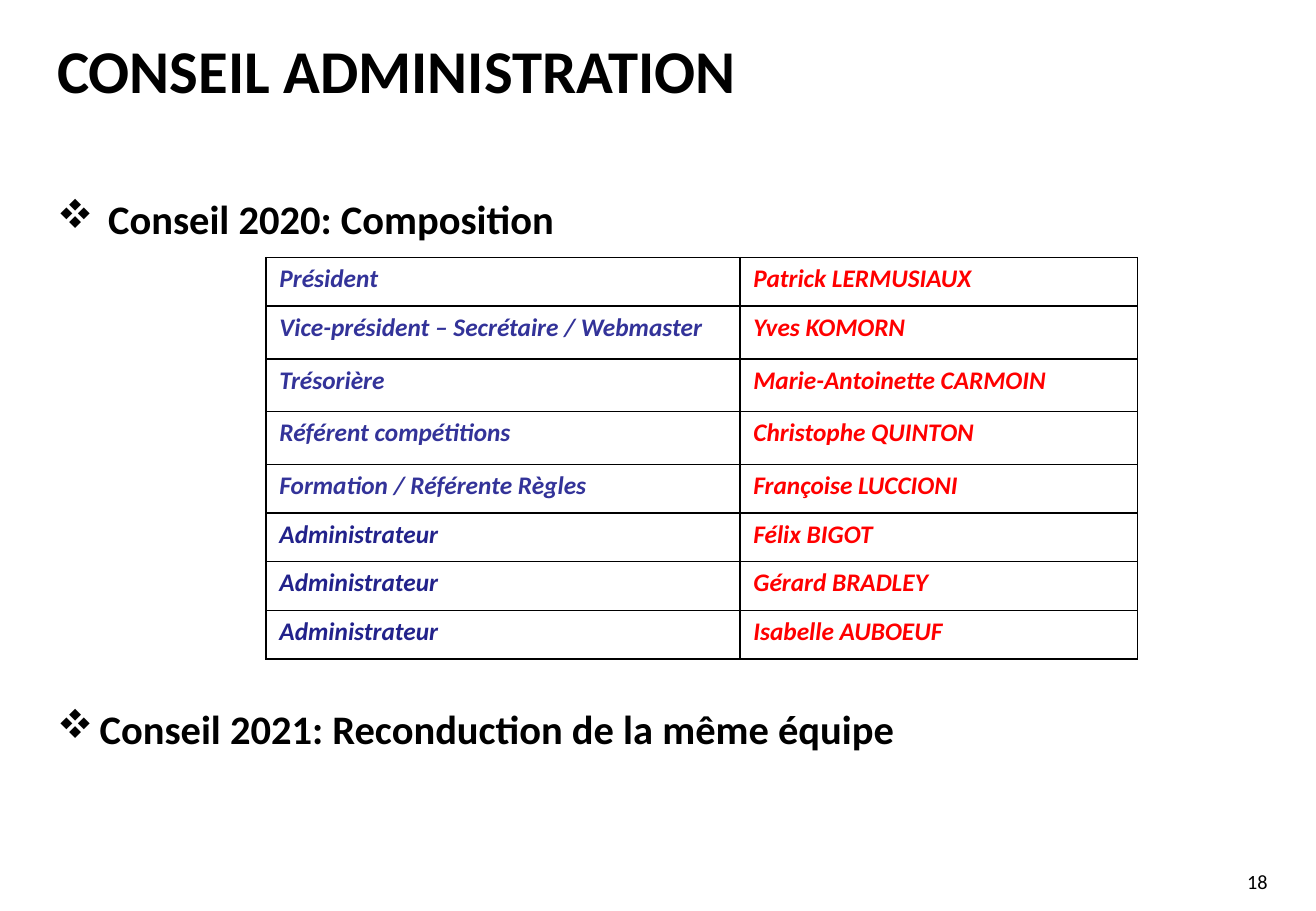
import pptx
import pptx.util
import pptx.dml.color
import pptx.enum.text
import pptx.oxml
import pptx.oxml.ns
from pptx.util import Inches

BLACK, RED, BLUE, NAVY = "000000", "FF0000", "333399", "22228B"
FONT = "Calibri"

TITLE = "CONSEIL ADMINISTRATION"
PAGE = "18"
# text, top, hanging indent
HEADINGS = [
    ("Conseil 2020: Composition", 1.55, 0.42),
    ("Conseil 2021: Reconduction de la même équipe", 5.75, 0.35),
]
# role, role colour, member, row height
BOARD = [
    ("Président", BLUE, "Patrick LERMUSIAUX", 0.4),
    ("Vice-président – Secrétaire / Webmaster", BLUE, "Yves KOMORN", 0.435),
    ("Trésorière", BLUE, "Marie-Antoinette CARMOIN", 0.435),
    ("Référent compétitions", BLUE, "Christophe QUINTON", 0.435),
    ("Formation / Référente Règles", BLUE, "Françoise LUCCIONI", 0.4),
    ("Administrateur", NAVY, "Félix BIGOT", 0.4),
    ("Administrateur", NAVY, "Gérard BRADLEY", 0.4),
    ("Administrateur", NAVY, "Isabelle AUBOEUF", 0.4),
]
COLUMNS = (3.9, 3.27)
TABLE_LEFT, TABLE_TOP = 2.19, 2.12


def color(hex_code):
    return pptx.dml.color.RGBColor.from_string(hex_code)


def write(p, text, size, hex_code=BLACK, **formats):
    r = p.add_run()
    r.text = text
    formats.update(name=FONT, size=pptx.util.Pt(size))
    for name, value in formats.items():
        setattr(r.font, name, value)
    r.font.color.rgb = color(hex_code)


def set_margins(target, side):
    margins = {"left": side, "right": side, "top": 0.05, "bottom": 0.05}
    for name, value in margins.items():
        setattr(target, f"margin_{name}", Inches(value))


def add_text(s, box, side=0.09):
    """Add an empty text box and return its first paragraph."""
    tf = s.shapes.add_textbox(*map(Inches, box)).text_frame
    tf.word_wrap = True
    set_margins(tf, side)
    return tf.paragraphs[0]


def add_bullet(p, indent):
    pPr = p._p.get_or_add_pPr()
    pPr.set("marL", str(Inches(indent)))
    pPr.set("indent", str(-Inches(indent)))
    ns = pptx.oxml.ns.nsdecls("a")
    pPr.append(pptx.oxml.parse_xml(f'<a:buFont {ns} typeface="Wingdings"/>'))
    pPr.append(pptx.oxml.parse_xml(f'<a:buChar {ns} char="v"/>'))


def add_borders(cell):
    tcPr = cell._tc.get_or_add_tcPr()
    ns = pptx.oxml.ns.nsdecls("a")
    for side in "LRTB":
        tcPr.append(pptx.oxml.parse_xml(
            f'<a:ln{side} {ns} w="{pptx.util.Pt(1)}"><a:solidFill>'
            f'<a:srgbClr val="{BLACK}"/></a:solidFill></a:ln{side}>'))


def add_board(s):
    heights = [row[-1] for row in BOARD]
    box = (TABLE_LEFT, TABLE_TOP, sum(COLUMNS), sum(heights))
    table = s.shapes.add_table(len(BOARD), len(COLUMNS), *map(Inches, box)).table
    table.first_row = table.horz_banding = False
    for column, width in zip(table.columns, COLUMNS):
        column.width = Inches(width)
    for i, (role, role_color, member, height) in enumerate(BOARD):
        table.rows[i].height = Inches(height)
        for j, (text, hex_code) in enumerate([(role, role_color), (member, RED)]):
            cell = table.cell(i, j)
            set_margins(cell, 0.11)
            add_borders(cell)
            cell.fill.background()
            write(cell.text_frame.paragraphs[0], text, 15, hex_code,
                  bold=True, italic=True)


def main():
    prs = pptx.Presentation()
    prs.slide_width, prs.slide_height = Inches(10.83), Inches(7.5)
    s = prs.slides.add_slide(prs.slide_layouts[6])
    write(add_text(s, (0.38, 0.22, 9.76, 0.91)), TITLE, 36, bold=True)
    for text, top, indent in HEADINGS:
        p = add_text(s, (0.38, top, 10.24, 0.51))
        add_bullet(p, indent)
        write(p, text, 24, bold=True)
    p = add_text(s, (9.98, 7.11, 0.55, 0.36), side=0.1)
    p.alignment = pptx.enum.text.PP_ALIGN.RIGHT
    write(p, PAGE, 12)
    add_board(s)
    prs.save("out.pptx")


if __name__ == "__main__":
    main()
